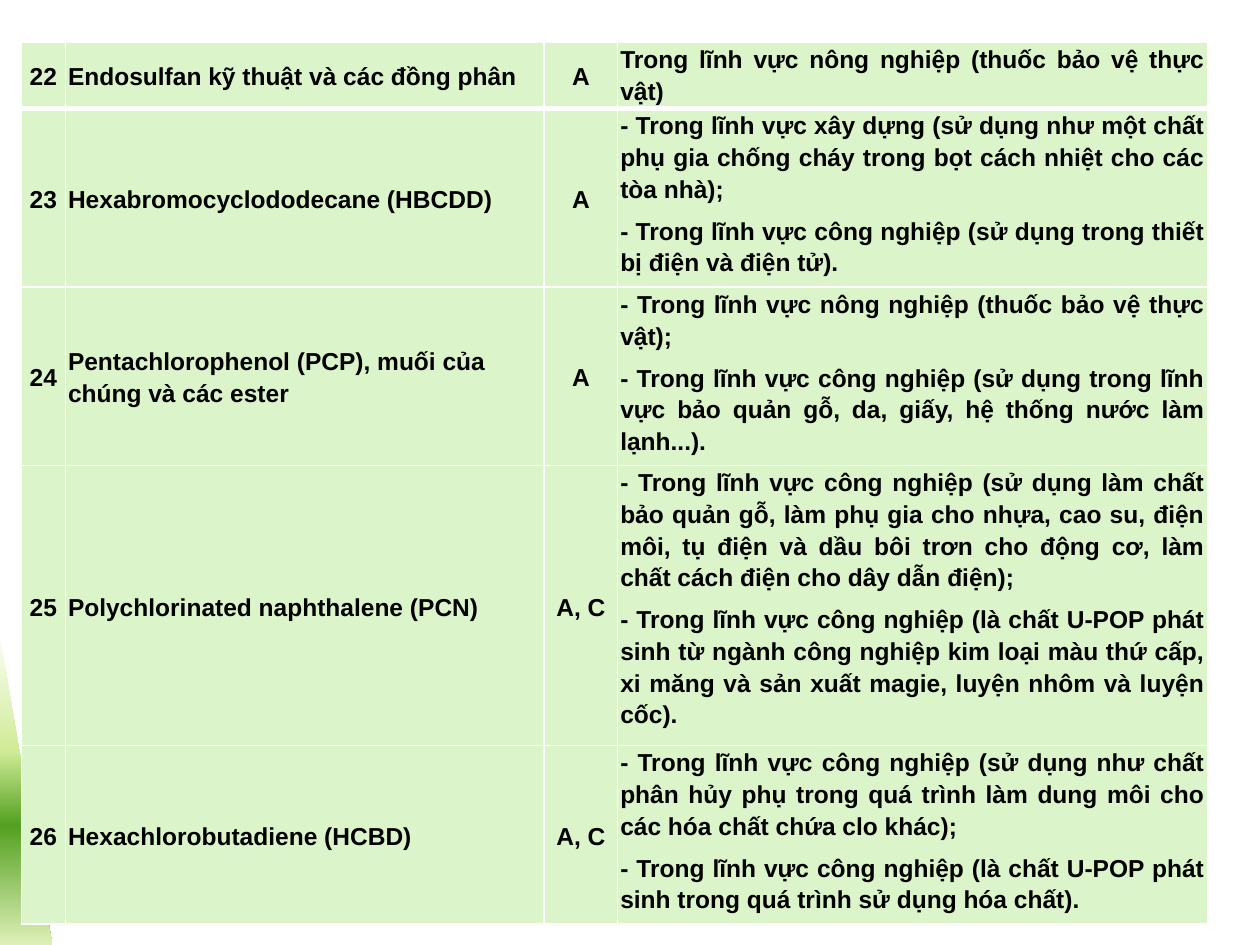
from copy import deepcopy

from lxml import etree
from pptx import Presentation
from pptx.dml.color import RGBColor
from pptx.enum.shapes import MSO_SHAPE
from pptx.enum.text import MSO_ANCHOR, PP_ALIGN
from pptx.oxml.ns import qn
from pptx.util import Pt

RIGHT_TRIANGLE = MSO_SHAPE.RIGHT_TRIANGLE
MIDDLE, TOP = MSO_ANCHOR.MIDDLE, MSO_ANCHOR.TOP
LEFT, CENTER, JUSTIFY = PP_ALIGN.LEFT, PP_ALIGN.CENTER, PP_ALIGN.JUSTIFY

CELL_COLOR = "DBF4CA"
BORDER_COLOR = "FFFFFF"
TRIANGLE_STOPS = [(0, "FAFDF3"), (0.37, "D0EB96"), (0.61, "54A021"), (1, "DFF1B9")]

COLUMN_WIDTHS = [25.2, 273.6, 42, 337]
COLUMN_FORMATS = [(CENTER, MIDDLE), (LEFT, MIDDLE), (CENTER, MIDDLE), (JUSTIFY, TOP)]
ROW_HEIGHTS = [38, 102, 102, 160, 102]

# Number, substance, annex, fields of use
SUBSTANCES = [
    ("22", "Endosulfan kỹ thuật và các đồng phân", "A",
     "Trong lĩnh vực nông nghiệp (thuốc bảo vệ thực vật)"),
    ("23", "Hexabromocyclododecane (HBCDD)", "A",
     "- Trong lĩnh vực xây dựng (sử dụng như một chất phụ gia chống cháy trong "
     "bọt cách nhiệt cho các tòa nhà);\n"
     "- Trong lĩnh vực công nghiệp (sử dụng trong thiết bị điện và điện tử)."),
    ("24", "Pentachlorophenol (PCP), muối của chúng và các ester", "A",
     "- Trong lĩnh vực nông nghiệp (thuốc bảo vệ thực vật);\n"
     "- Trong lĩnh vực công nghiệp (sử dụng trong lĩnh vực bảo quản gỗ, da, giấy, "
     "hệ thống nước làm lạnh...)."),
    ("25", "Polychlorinated naphthalene (PCN)", "A, C",
     "- Trong lĩnh vực công nghiệp (sử dụng làm chất bảo quản gỗ, làm phụ gia cho "
     "nhựa, cao su, điện môi, tụ điện và dầu bôi trơn cho động cơ, làm chất cách "
     "điện cho dây dẫn điện);\n"
     "- Trong lĩnh vực công nghiệp (là chất U-POP phát sinh từ ngành công nghiệp "
     "kim loại màu thứ cấp, xi măng và sản xuất magie, luyện nhôm và luyện cốc)."),
    ("26", "Hexachlorobutadiene (HCBD)", "A, C",
     "- Trong lĩnh vực công nghiệp (sử dụng như chất phân hủy phụ trong quá trình "
     "làm dung môi cho các hóa chất chứa clo khác);\n"
     "- Trong lĩnh vực công nghiệp (là chất U-POP phát sinh trong quá trình sử "
     "dụng hóa chất)."),
]


def color(hex_string):
    return RGBColor.from_string(hex_string)


def write_text(text_frame, text, align=LEFT, size=14, font="Arial", bold=True,
               text_color="000000", line_spacing=1.15, space_after=6):
    """Write one paragraph for each line of text."""
    text_frame.text = text
    for paragraph in text_frame.paragraphs:
        paragraph.alignment = align
        paragraph.line_spacing = line_spacing
        paragraph.space_after = Pt(space_after)
        for run in paragraph.runs:
            run.font.size = Pt(size)
            run.font.name = font
            run.font.bold = bold
            run.font.color.rgb = color(text_color)


def set_border(cell, side, width):
    line = etree.SubElement(cell._tc.get_or_add_tcPr(), qn(f"a:ln{side}"), w=str(Pt(width)))
    fill = etree.SubElement(line, qn("a:solidFill"))
    etree.SubElement(fill, qn("a:srgbClr"), val=BORDER_COLOR)


def format_cell(cell, anchor, top_border, bottom_border):
    cell.vertical_anchor = anchor
    cell.margin_left = cell.margin_right = Pt(1.5)
    cell.margin_top = cell.margin_bottom = 0
    for side, width in (("L", 1), ("R", 1), ("T", top_border), ("B", bottom_border)):
        set_border(cell, side, width)
    cell.fill.solid()
    cell.fill.fore_color.rgb = color(CELL_COLOR)


def add_gradient_triangle(slide, left, top, width, height, stops):
    shape = slide.shapes.add_shape(RIGHT_TRIANGLE, Pt(left), Pt(top), Pt(width), Pt(height))
    shape.shadow.inherit = False
    shape.line.fill.background()
    shape.fill.gradient()
    shape.fill.gradient_angle = 270
    stop_list = shape._element.spPr.find(".//" + qn("a:gsLst"))
    while len(stop_list) < len(stops):
        stop_list.append(deepcopy(stop_list[0]))
    for gradient_stop, (position, hex_string) in zip(shape.fill.gradient_stops, stops):
        gradient_stop.position = position
        gradient_stop.color.rgb = color(hex_string)


def add_substance_table(slide, left, top):
    frame = slide.shapes.add_table(len(SUBSTANCES), len(COLUMN_WIDTHS), Pt(left), Pt(top),
                                   Pt(sum(COLUMN_WIDTHS)), Pt(sum(ROW_HEIGHTS)))
    table = frame.table
    table.first_row = table.horz_banding = False
    for column, width in zip(table.columns, COLUMN_WIDTHS):
        column.width = Pt(width)
    for row_index, (row, height) in enumerate(zip(table.rows, ROW_HEIGHTS)):
        row.height = Pt(height)
        top_border = 3 if row_index == 1 else 1
        bottom_border = 3 if row_index == 0 else 1
        for cell, text, (align, anchor) in zip(row.cells, SUBSTANCES[row_index], COLUMN_FORMATS):
            write_text(cell.text_frame, text, align=align)
            format_cell(cell, anchor, top_border, bottom_border)


def main():
    presentation = Presentation()
    presentation.slide_width, presentation.slide_height = Pt(720), Pt(540)
    slide = presentation.slides.add_slide(presentation.slide_layouts[6])
    add_gradient_triangle(slide, 0, 364, 30, 176.5, TRIANGLE_STOPS)
    add_substance_table(slide, 12.2, 24)
    presentation.save("out.pptx")


if __name__ == "__main__":
    main()
